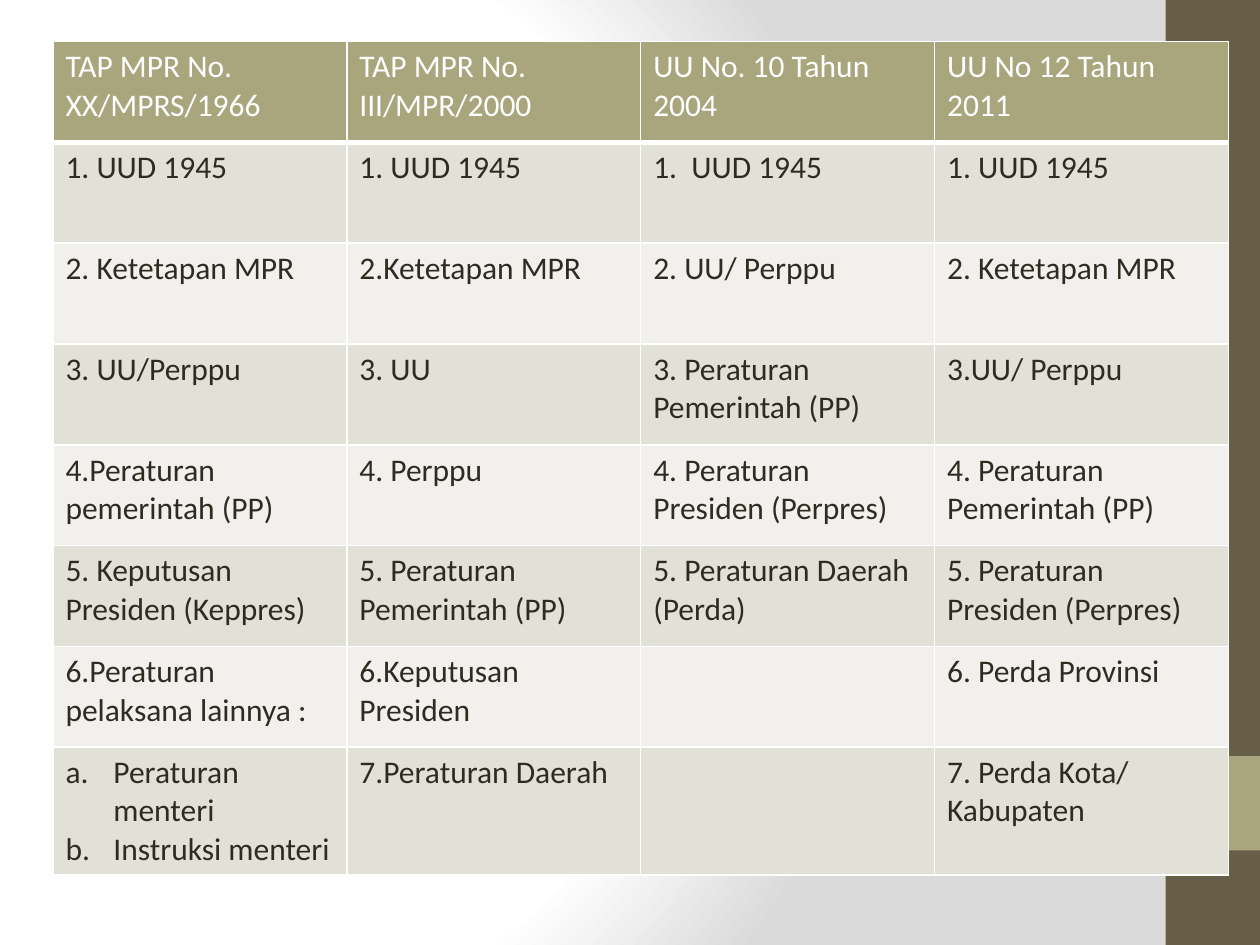
from dataclasses import dataclass

from pptx import Presentation, oxml
from pptx.dml.color import RGBColor
from pptx.enum import shapes
from pptx.oxml import ns
from pptx.util import Inches, Pt


@dataclass(frozen=True)
class Theme:
    font: str = "Calibri"
    size: int = 18
    white: str = "FFFFFF"
    grey: str = "DADADA"
    ink: str = "2F2B20"
    brown: str = "675E47"
    olive: str = "A9A57C"
    bands: tuple = ("E2E1D7", "F1F0EC")


theme = Theme()

HEADERS = ["TAP MPR No. XX/MPRS/1966", "TAP MPR No. III/MPR/2000",
           "UU No. 10 Tahun 2004", "UU No 12 Tahun 2011"]
ROWS = [
    HEADERS,
    ["1. UUD 1945", "1. UUD 1945", "1.  UUD 1945", "1. UUD 1945"],
    ["2. Ketetapan MPR", "2.Ketetapan MPR", "2. UU/ Perppu", "2. Ketetapan MPR"],
    ["3. UU/Perppu", "3. UU", "3. Peraturan Pemerintah (PP)", "3.UU/ Perppu"],
    ["4.Peraturan pemerintah (PP)", "4. Perppu",
     "4. Peraturan Presiden (Perpres)", "4. Peraturan Pemerintah (PP)"],
    ["5. Keputusan Presiden (Keppres)", "5. Peraturan Pemerintah (PP)",
     "5. Peraturan Daerah (Perda)", "5. Peraturan Presiden (Perpres)"],
    ["6.Peraturan pelaksana lainnya :", "6.Keputusan Presiden", "",
     "6. Perda Provinsi"],
    ["Peraturan menteri\nInstruksi menteri", "7.Peraturan Daerah", "",
     "7. Perda Kota/ Kabupaten"],
]


def set_borders(cell, bottom_width):
    properties = cell._tc.get_or_add_tcPr()
    widths = {"lnL": 1, "lnR": 1, "lnT": 1, "lnB": bottom_width}
    for position, (side, width) in enumerate(widths.items()):
        properties.insert(position, oxml.parse_xml(
            f'<a:{side} {ns.nsdecls("a")} w="{Pt(width)}"><a:solidFill>'
            f'<a:srgbClr val="{theme.white}"/></a:solidFill></a:{side}>'))


def letter_list(paragraph):
    """Number the paragraph a., b., ... with a hanging indent."""
    properties = paragraph._p.get_or_add_pPr()
    indent = Inches(0.38)
    properties.set("marL", str(indent))
    properties.set("indent", str(-indent))
    properties.append(oxml.parse_xml(
        f'<a:buAutoNum {ns.nsdecls("a")} type="alphaLcPeriod"/>'))


presentation = Presentation()
presentation.slide_width = Inches(10)
presentation.slide_height = Inches(7.5)
slide = presentation.slides.add_slide(presentation.slide_layouts[6])

# Background: radial glow from the left
slide.background.fill.gradient()
gradient = next(slide.element.iter(ns.qn("a:gradFill")))
stops = "".join(
    f'<a:gs pos="{percent * 1000}"><a:srgbClr val="{color}"/></a:gs>'
    for percent, color in [(0, theme.white), (75, theme.white), (100, theme.grey)])
gradient.getparent().replace(gradient, oxml.parse_xml(
    f'<a:gradFill {ns.nsdecls("a")} rotWithShape="1"><a:gsLst>{stops}</a:gsLst>'
    '<a:path path="circle"><a:fillToRect l="20000" t="50000" r="100000" b="50000"/>'
    '</a:path></a:gradFill>'))

# Side band and its accent
for top, height, color in [(0, 7.5, theme.brown), (6, 0.75, theme.olive)]:
    shape = slide.shapes.add_shape(shapes.MSO_SHAPE.RECTANGLE, Inches(9.25),
                                   Inches(top), Inches(0.75), Inches(height))
    shape.shadow.inherit = False
    shape.fill.solid()
    shape.fill.fore_color.rgb = RGBColor.from_string(color)
    shape.line.fill.background()

# Comparison table
table = slide.shapes.add_table(len(ROWS), len(HEADERS), Inches(0.42), Inches(0.33),
                               Inches(9.33), Inches(0.8 * len(ROWS))).table
for row_index, row in enumerate(ROWS):
    is_header = row_index == 0
    fill = theme.olive if is_header else theme.bands[(row_index - 1) % 2]
    ink = theme.white if is_header else theme.ink
    for column_index, content in enumerate(row):
        cell = table.cell(row_index, column_index)
        cell.text_frame.text = content
        cell.fill.solid()
        cell.fill.fore_color.rgb = RGBColor.from_string(fill)
        set_borders(cell, 3 if is_header else 1)
        for paragraph in cell.text_frame.paragraphs:
            if len(cell.text_frame.paragraphs) > 1:
                letter_list(paragraph)
            for run in paragraph.runs:
                run.font.name = theme.font
                run.font.size = Pt(theme.size)
                run.font.bold = False
                run.font.color.rgb = RGBColor.from_string(ink)

presentation.save("out.pptx")
